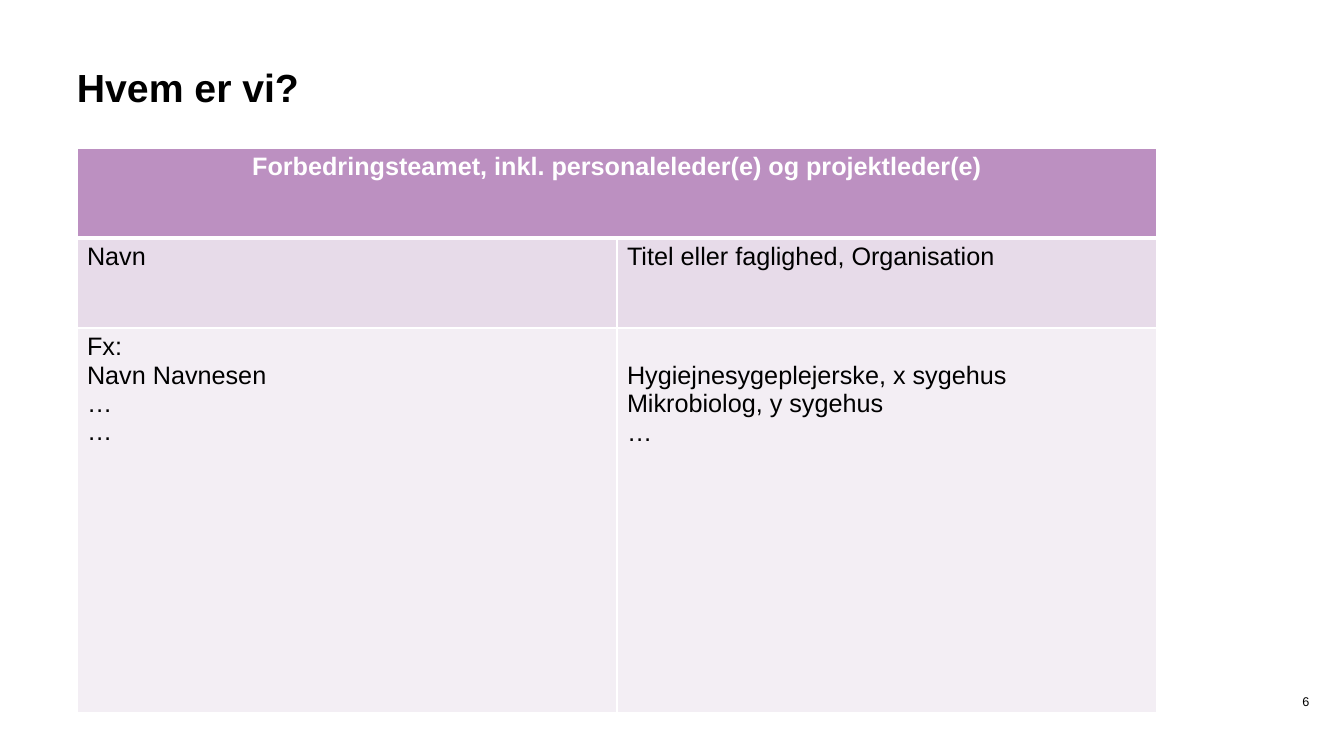
from lxml.etree import SubElement
from pptx import Presentation
from pptx.dml.color import RGBColor
from pptx.enum.text import MSO_ANCHOR, PP_ALIGN
from pptx.oxml.ns import qn
from pptx.util import Emu, Pt

SCALE = 914400 / 100.8
SIDES = ("lnL", "lnR", "lnT", "lnB")


def px(n):
    return Emu(round(n * SCALE))


def color(code):
    return RGBColor.from_string(code)


def write(frame, lines, size, ink="000000", bold=False, align=PP_ALIGN.LEFT):
    frame.word_wrap = True
    for i, line in enumerate(lines):
        para = frame.paragraphs[0] if i == 0 else frame.add_paragraph()
        para.text = line
        para.alignment = align
        font = para.font
        font.name, font.size, font.bold = "Arial", Pt(size), bold
        font.color.rgb = color(ink)


def add_text(slide, box, text, size, anchor=MSO_ANCHOR.TOP, **style):
    frame = slide.shapes.add_textbox(*map(px, box)).text_frame
    frame.margin_left = frame.margin_right = 0
    frame.margin_top = frame.margin_bottom = 0
    frame.vertical_anchor = anchor
    write(frame, [text], size, **style)
    return frame


def set_edges(cell, widths):
    props = cell._tc.get_or_add_tcPr()
    for side, width in zip(SIDES, widths):
        line = SubElement(props, qn("a:" + side), w=str(Pt(width)))
        fill = SubElement(line, qn("a:solidFill"))
        SubElement(fill, qn("a:srgbClr"), val="FFFFFF")


def add_grid(slide, left, top, cols, rows):
    shape = slide.shapes.add_table(
        len(rows), len(cols), px(left), px(top), px(sum(cols)), px(sum(rows)))
    table = shape.table
    table.first_row = table.horz_banding = False
    for col, width in zip(table.columns, cols):
        col.width = px(width)
    for row, height in zip(table.rows, rows):
        row.height = px(height)
    return table


def main():
    deck = Presentation()
    deck.slide_width, deck.slide_height = px(1344), px(756)
    slide = deck.slides.add_slide(deck.slide_layouts[6])

    # Title and page number
    title = add_text(slide, (77, 0, 1063, 111), "Hvem er vi?", 28,
                     MSO_ANCHOR.BOTTOM, bold=True)
    title.paragraphs[0].line_spacing = 0.85
    add_text(slide, (1268, 694, 76, 20), "6", 9, align=PP_ALIGN.CENTER)

    # Team table: fills and edges by row
    team = add_grid(slide, 77, 148, (540, 540), (90, 90, 385))
    looks = (("BC90C1", (1, 1, 1, 3)),
             ("E7DBE9", (1, 1, 3, 1)),
             ("F3EEF4", (1, 1, 1, 1)))
    for r, (fill, edges) in enumerate(looks):
        for c in range(2):
            cell = team.cell(r, c)
            set_edges(cell, edges)
            cell.fill.solid()
            cell.fill.fore_color.rgb = color(fill)

    # Header across both columns
    head = team.cell(0, 0)
    head.merge(team.cell(0, 1))
    write(head.text_frame,
          ["Forbedringsteamet, inkl. personaleleder(e) og projektleder(e)"],
          18, "FFFFFF", True, PP_ALIGN.CENTER)

    # Body
    body = ((["Navn"], ["Titel eller faglighed, Organisation"]),
            (["Fx:", "Navn Navnesen", "…", "…"],
             ["Hygiejnesygeplejerske, x sygehus", "Mikrobiolog, y sygehus",
              "…"]))
    for r, row in enumerate(body, 1):
        for c, lines in enumerate(row):
            write(team.cell(r, c).text_frame, lines, 18)
    # Titles start one line down, level with the first name
    team.cell(2, 1).margin_top = px(34)

    deck.save("out.pptx")


if __name__ == "__main__":
    main()
